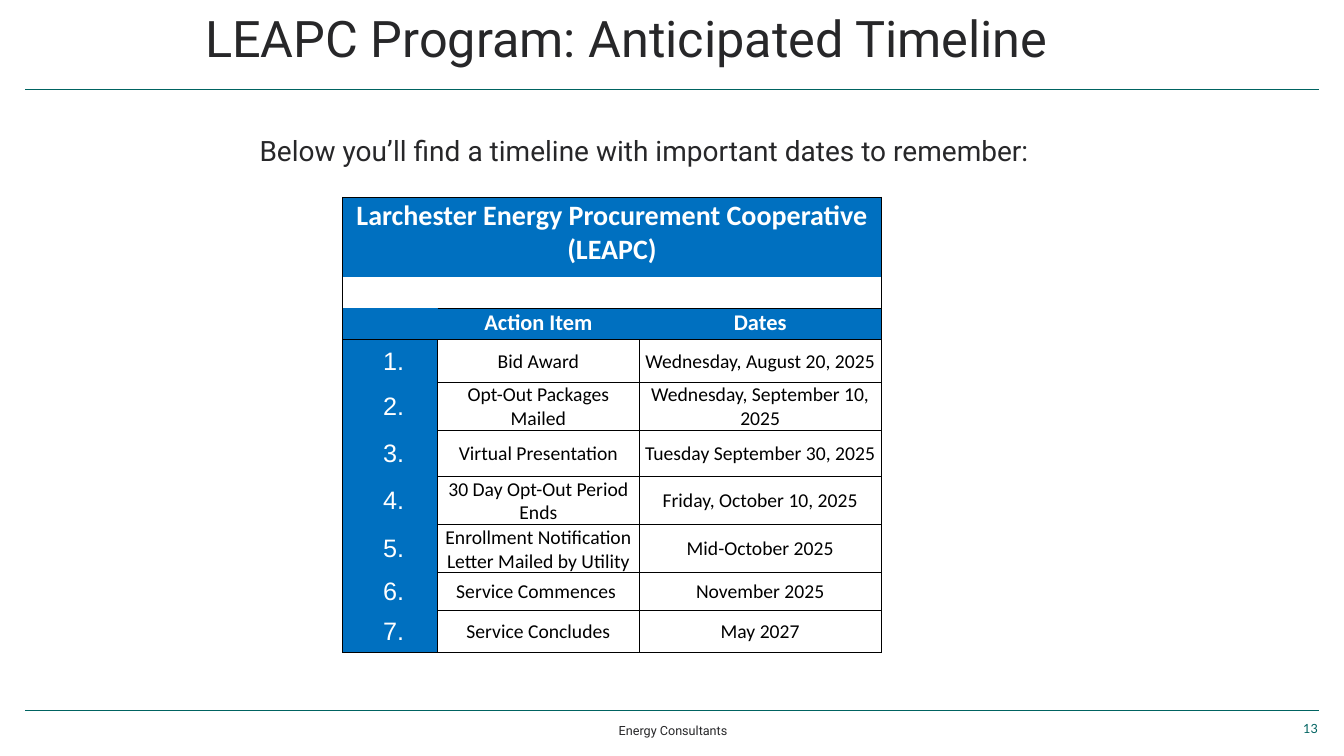
from lxml import etree
from pptx import Presentation
from pptx import util as u
from pptx.dml.color import RGBColor
from pptx.enum import shapes, text
from pptx.oxml import ns

PX = 9144  # EMU per px, 100 px to the inch
COLORS = {"ink": "272729", "teal": "006361", "blue": "0070C0",
          "white": "FFFFFF", "black": "000000"}
ALIGN = text.PP_ALIGN
ANCHOR = text.MSO_ANCHOR

COLUMN_WIDTHS = [94, 200, 240]
ROW_HEIGHTS = [79, 27, 28, 42, 43, 46, 43, 43, 37, 42]
GAP_ROW, HEADER_ROW, FIRST_STEP = 1, 2, 3
STEPS = [
    ("Bid Award", "Wednesday, August 20, 2025"),
    ("Opt-Out Packages Mailed", "Wednesday, September 10, 2025"),
    ("Virtual Presentation", "Tuesday September 30, 2025"),
    ("30 Day Opt-Out Period Ends", "Friday, October 10, 2025"),
    ("Enrollment Notification Letter Mailed by Utility", "Mid-October 2025"),
    ("Service Commences ", "November 2025"),
    ("Service Concludes", "May 2027"),
]


def px(*lengths):
    return [u.Emu(length * PX) for length in lengths]


def rgb(name):
    return RGBColor.from_string(COLORS[name])


def add_span(para, words, size, font, color, bold=False):
    span = para.add_run()
    span.text = words
    span.font.size = u.Pt(size)
    span.font.name = font
    span.font.bold = bold
    span.font.color.rgb = rgb(color)


def add_rule(page, y):
    rule = page.shapes.add_connector(
        shapes.MSO_CONNECTOR.STRAIGHT, *px(25, y, 1308, y))
    rule.line.color.rgb = rgb("teal")
    rule.line.width = u.Pt(1)
    etree.SubElement(rule.element.spPr, ns.qn("a:effectLst"))


def add_text(page, bounds, words, size, font="Roboto", color="ink",
             align=ALIGN.CENTER, anchor=ANCHOR.MIDDLE, bottom=0):
    """Add a one-paragraph text box and return the paragraph."""
    frame = page.shapes.add_textbox(*px(*bounds)).text_frame
    frame.word_wrap = True
    frame.vertical_anchor = anchor
    frame.margin_left = frame.margin_top = frame.margin_right = 0
    frame.margin_bottom = px(bottom)[0]
    para = frame.paragraphs[0]
    para.alignment = align
    add_span(para, words, size, font, color)
    return para


def horizontal_width(edge, col):
    """Width of the border above row number edge."""
    if edge in (0, len(ROW_HEIGHTS)):
        return 1
    if edge == FIRST_STEP:
        return 0.5 if col else 1
    if col == 0 or edge < HEADER_ROW:
        return 0
    return 1 if edge == HEADER_ROW else 0.5


def vertical_width(row, edge):
    """Width of the border left of column number edge."""
    if edge in (0, len(COLUMN_WIDTHS)):
        return 1
    return 0.5 if row >= FIRST_STEP else 0


def set_borders(cell, row, col):
    right_edge = len(COLUMN_WIDTHS) if row < HEADER_ROW else col + 1
    widths = {"L": vertical_width(row, col),
              "R": vertical_width(row, right_edge),
              "T": horizontal_width(row, col),
              "B": horizontal_width(row + 1, col)}
    properties = cell._tc.get_or_add_tcPr()
    for side, width in widths.items():
        line = etree.SubElement(properties, ns.qn(f"a:ln{side}"),
                                w=str(int(u.Pt(width))))
        if width:
            fill = etree.SubElement(line, ns.qn("a:solidFill"))
            etree.SubElement(fill, ns.qn("a:srgbClr"), val=COLORS["black"])
        else:
            etree.SubElement(line, ns.qn("a:noFill"))


def style_cell(cell, row, col):
    set_borders(cell, row, col)
    if row in (0, HEADER_ROW) or (row >= FIRST_STEP and col == 0):
        cell.fill.solid()
        cell.fill.fore_color.rgb = rgb("blue")
    else:
        cell.fill.background()
    cell.margin_left, cell.margin_top, cell.margin_right = px(1, 1, 1)
    cell.margin_bottom = 0
    cell.vertical_anchor = ANCHOR.MIDDLE if row >= FIRST_STEP else ANCHOR.TOP


def write_cell(cell, words, size, font="Calibri", color="black", bold=False):
    para = cell.text_frame.paragraphs[0]
    para.alignment = ALIGN.CENTER
    add_span(para, words, size, font, color, bold)


def add_timeline(page, left, top):
    table = page.shapes.add_table(
        len(ROW_HEIGHTS), len(COLUMN_WIDTHS),
        *px(left, top, sum(COLUMN_WIDTHS), sum(ROW_HEIGHTS))).table
    table.first_row = table.horz_banding = False
    for column, width in zip(table.columns, px(*COLUMN_WIDTHS)):
        column.width = width
    for row, height in enumerate(px(*ROW_HEIGHTS)):
        table.rows[row].height = height
        for col in range(len(COLUMN_WIDTHS)):
            style_cell(table.cell(row, col), row, col)
    for row in (0, GAP_ROW):
        table.cell(row, 0).merge(table.cell(row, len(COLUMN_WIDTHS) - 1))

    write_cell(table.cell(0, 0),
               "Larchester Energy Procurement Cooperative (LEAPC)",
               20, color="white", bold=True)
    # Small empty text keeps the gap row and header corner at their heights
    for row in (GAP_ROW, HEADER_ROW):
        write_cell(table.cell(row, 0), "", 14)
    for col, heading in enumerate(("Action Item", "Dates"), 1):
        write_cell(table.cell(HEADER_ROW, col), heading, 16,
                   color="white", bold=True)
    for number, (action, date) in enumerate(STEPS, 1):
        row = HEADER_ROW + number
        write_cell(table.cell(row, 0), f" {number}.", 18, "Arial", "white")
        write_cell(table.cell(row, 1), action, 14)
        write_cell(table.cell(row, 2), date, 14)


def main():
    deck = Presentation()
    deck.slide_width, deck.slide_height = px(1333, 750)
    page = deck.slides.add_slide(deck.slide_layouts[6])
    for y in (705, 89):
        add_rule(page, y)
    title = add_text(page, (25, 0, 1193, 89),
                     "LEAPC Program: Anticipated Timeline", 36)
    title.line_spacing = u.Pt(32)
    add_text(page, (35, 132, 1215, 522),
             "Below you’ll find a timeline with important dates to remember: ",
             20, anchor=ANCHOR.TOP)
    add_text(page, (372, 715, 591, 20), "Energy Consultants", 9)
    add_text(page, (1228, 715, 79, 20), "13", 9, "Lato", "teal",
             align=ALIGN.RIGHT, bottom=4)
    add_timeline(page, 340, 196)
    deck.save("out.pptx")


if __name__ == "__main__":
    main()
